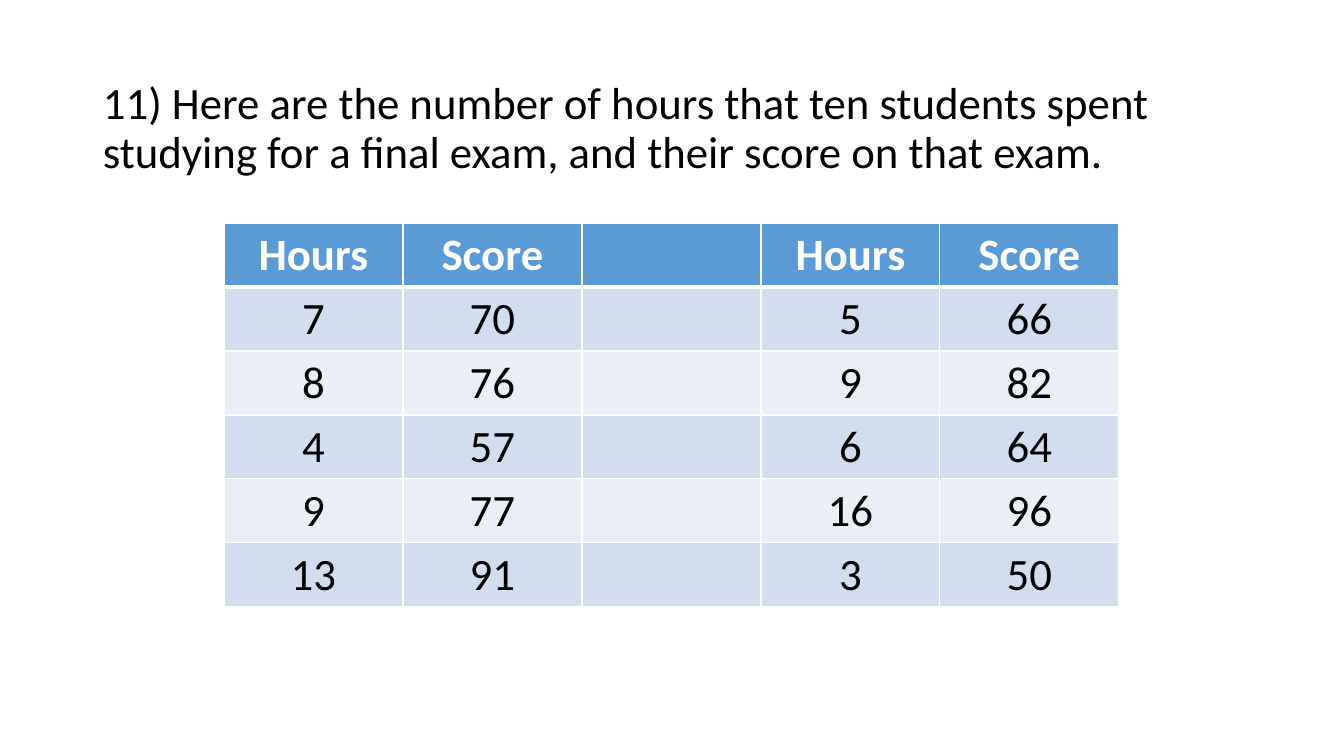
"""Build a slide with a question on study hours and a table of exam scores."""
import lxml.etree
import pptx
import pptx.dml.color
import pptx.enum.text
import pptx.oxml.ns
import pptx.util

QUESTION = ("11) Here are the number of hours that ten students spent "
            "studying for a final exam, and their score on that exam.")
ROWS = [
    ("Hours", "Score", "", "Hours", "Score"),
    ("7", "70", "", "5", "66"),
    ("8", "76", "", "9", "82"),
    ("4", "57", "", "6", "64"),
    ("9", "77", "", "16", "96"),
    ("13", "91", "", "3", "50"),
]
THEME = {
    "font": "Calibri", "size": 32,
    "text": "000000", "header_text": "FFFFFF", "border": "FFFFFF",
    "header": "5B9BD5", "bands": ("EAEFF7", "D2DEEF"),
    "thin": 1, "thick": 3,
}
SLIDE = (1344, 756)
QUESTION_BOX = (93, 76, 1159, 606)
TABLE_LEFT, TABLE_TOP = 224, 223
COL_WIDTH, ROW_HEIGHT = 179, 64


def px(n):
    return pptx.util.Emu(round(n * 914400 / 100.8))


def rgb(value):
    return pptx.dml.color.RGBColor.from_string(value)


def set_font(p, color, bold=False):
    p.font.name = THEME["font"]
    p.font.size = pptx.util.Pt(THEME["size"])
    p.font.bold = bold
    p.font.color.rgb = rgb(color)


def set_borders(cell, widths):
    qn = pptx.oxml.ns.qn
    tcPr = cell._tc.get_or_add_tcPr()
    for i, (side, width) in enumerate(widths.items()):
        ln = lxml.etree.Element(qn(f"a:ln{side}"), w=str(pptx.util.Pt(width)))
        fill = lxml.etree.SubElement(ln, qn("a:solidFill"))
        lxml.etree.SubElement(fill, qn("a:srgbClr"), val=THEME["border"])
        tcPr.insert(i, ln)


def add_question(s):
    tf = s.shapes.add_textbox(*map(px, QUESTION_BOX)).text_frame
    tf.word_wrap = True
    p = tf.paragraphs[0]
    p.text = QUESTION
    p.line_spacing = 0.9
    p.space_before = pptx.util.Pt(10)
    set_font(p, THEME["text"])


def add_scores(s):
    n_rows, n_cols = len(ROWS), len(ROWS[0])
    table = s.shapes.add_table(
        n_rows, n_cols, px(TABLE_LEFT), px(TABLE_TOP),
        px(n_cols * COL_WIDTH), px(n_rows * ROW_HEIGHT)).table
    for col in table.columns:
        col.width = px(COL_WIDTH)
    for i, values in enumerate(ROWS):
        table.rows[i].height = px(ROW_HEIGHT)
        header = i == 0
        for j, value in enumerate(values):
            cell = table.cell(i, j)
            cell.fill.solid()
            cell.fill.fore_color.rgb = rgb(
                THEME["header"] if header else THEME["bands"][i % 2])
            set_borders(cell, {
                "L": THEME["thin"], "R": THEME["thin"],
                "T": THEME["thick"] if i == 1 else THEME["thin"],
                "B": THEME["thick"] if header else THEME["thin"]})
            p = cell.text_frame.paragraphs[0]
            p.text = value
            p.alignment = pptx.enum.text.PP_ALIGN.CENTER
            set_font(p, THEME["header_text"] if header else THEME["text"], header)


def main():
    prs = pptx.Presentation()
    prs.slide_width, prs.slide_height = map(px, SLIDE)
    s = prs.slides.add_slide(prs.slide_layouts[6])
    add_question(s)
    add_scores(s)
    prs.save("out.pptx")


if __name__ == "__main__":
    main()
